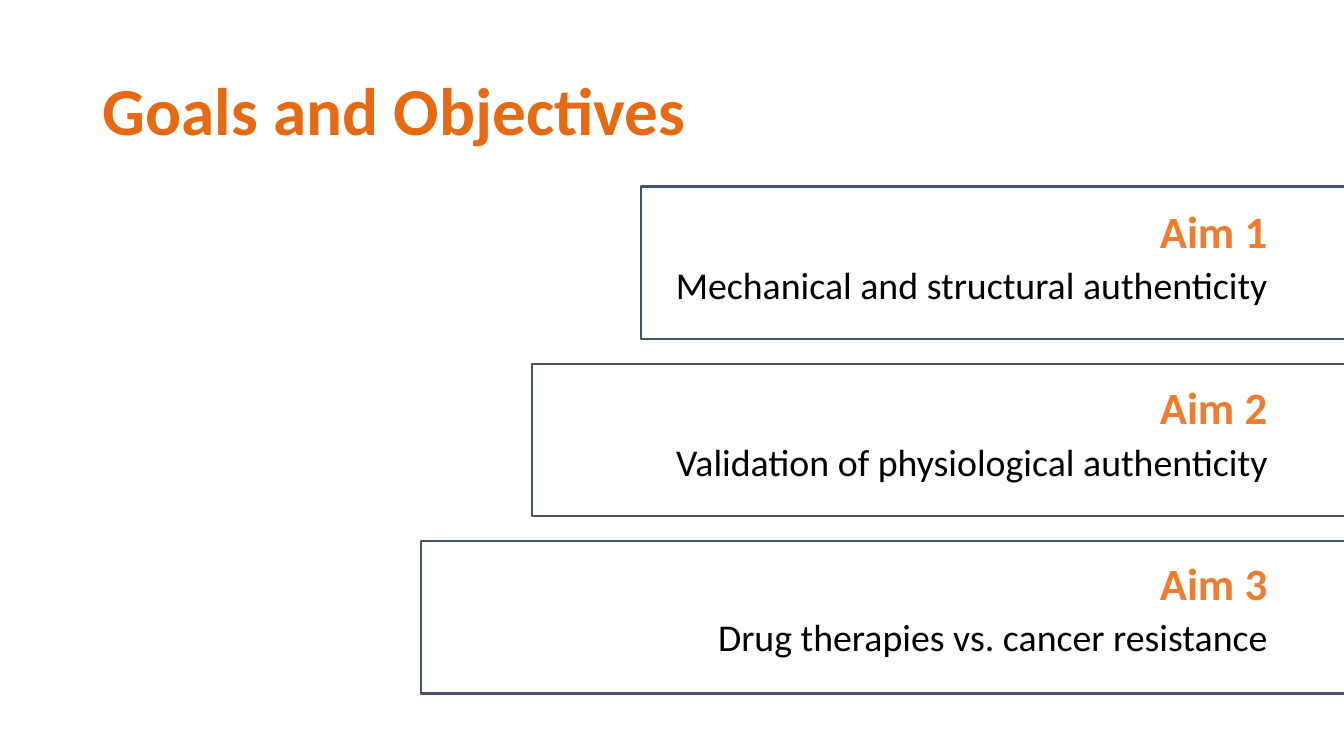
from pptx import Presentation
from pptx.dml.color import RGBColor
from pptx.enum import shapes, text
from pptx.util import Inches, Pt


def color(hex_code):
    return RGBColor.from_string(hex_code)


def write(shape, words, size, hex_code, bold=False,
          align=text.PP_ALIGN.RIGHT, anchor=text.MSO_ANCHOR.MIDDLE):
    frame = shape.text_frame
    frame.word_wrap = True
    frame.auto_size = text.MSO_AUTO_SIZE.NONE
    frame.vertical_anchor = anchor
    paragraph = frame.paragraphs[0]
    paragraph.alignment = align
    paragraph.line_spacing = 0.9
    paragraph.space_before = Pt(0)
    run = paragraph.add_run()
    run.text = words
    run.font.name = "Calibri"
    run.font.size = Pt(size)
    run.font.bold = bold
    run.font.color.rgb = color(hex_code)


deck = Presentation()
deck.slide_width, deck.slide_height = Inches(13.33), Inches(7.5)
slide = deck.slides.add_slide(deck.slide_layouts[5])

heading = slide.shapes.title
heading.left, heading.top = Inches(0.92), Inches(0.4)
heading.width, heading.height = Inches(11.5), Inches(1.45)
write(heading, "Goals and Objectives", 48, "E66914", bold=True,
      align=text.PP_ALIGN.LEFT)

# Goal, left edge of its step, top of its label
aims = [
    ("Mechanical and structural authenticity", 6.36, 2.04),
    ("Validation of physiological authenticity", 5.28, 3.79),
    ("Drug therapies vs. cancer resistance", 4.18, 5.53),
]
step_right, text_right = 13.39, 12.67
label_width, goal_width = 4.26, 7.23
label_height = 0.56

for index, (goal, step_left, label_top) in enumerate(aims):
    step = slide.shapes.add_shape(
        shapes.MSO_SHAPE.RECTANGLE, Inches(step_left), Inches(1.85 + 1.76 * index),
        Inches(step_right - step_left), Inches(1.51))
    step.shadow.inherit = False
    step.fill.background()
    step.line.color.rgb = color("44546A")
    step.line.width = Pt(1.5)

    label = slide.shapes.add_textbox(
        Inches(text_right - label_width), Inches(label_top),
        Inches(label_width), Inches(label_height))
    write(label, f"Aim {index + 1}", 32, "ED7D31", bold=True)

    goal_left = max(text_right - goal_width, step_left + 0.17)
    goal_box = slide.shapes.add_textbox(
        Inches(goal_left), Inches(label_top + label_height),
        Inches(text_right - goal_left), Inches(0.57))
    write(goal_box, goal, 27, "000000", anchor=text.MSO_ANCHOR.TOP)

deck.save("out.pptx")
